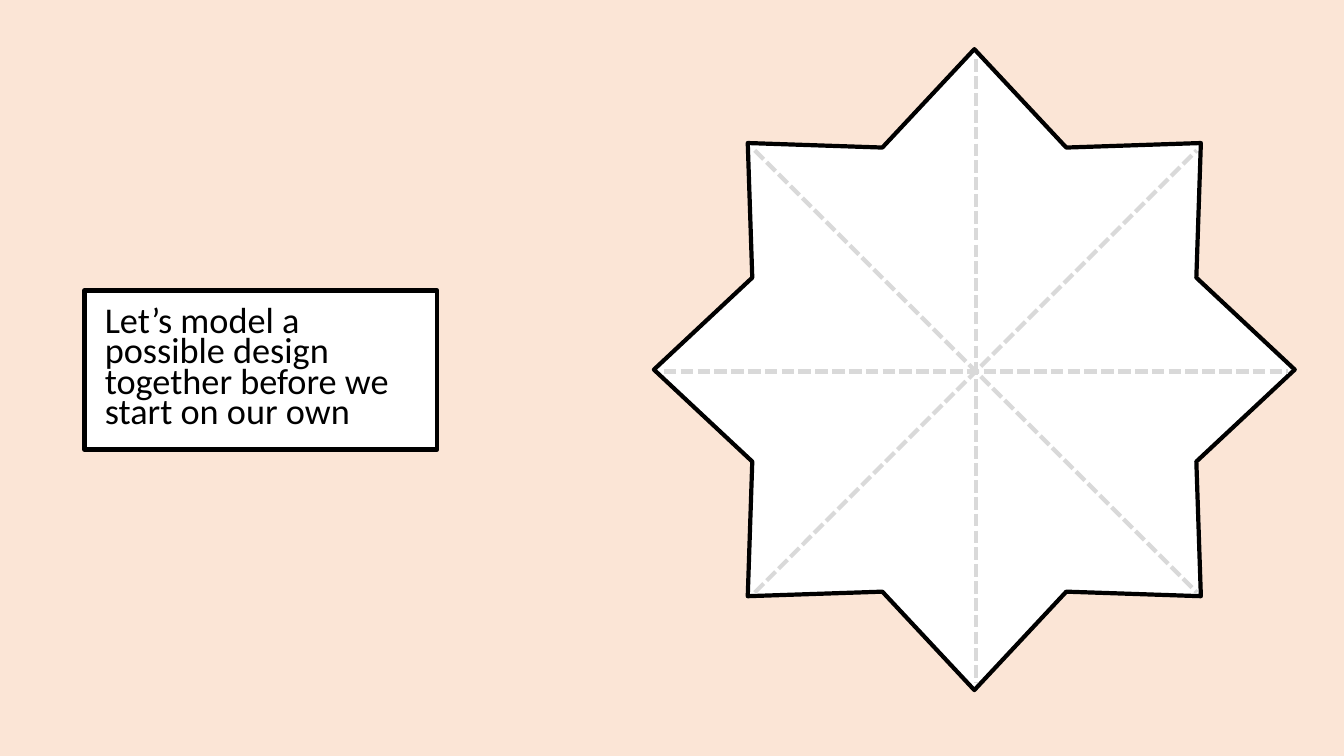
"""Build a slide with an eight-pointed star template and a modelling prompt."""
from lxml.etree import SubElement
from pptx import Presentation
from pptx.dml.color import RGBColor
from pptx.enum.dml import MSO_LINE
from pptx.enum.shapes import MSO_CONNECTOR, MSO_SHAPE
from pptx.enum.text import MSO_ANCHOR, MSO_AUTO_SIZE, PP_ALIGN
from pptx.oxml.ns import qn
from pptx.util import Cm, Pt

PROMPT = "Let’s model a possible design together before we start on our own"
PROMPT_BOX = (2.13, 7.32, 8.89, 4.01)
STAR_BOX = (16.48, 1.24, 16.15, 16.15)
FOLD_CENTRE = (24.59, 9.36)
STRAIGHT_REACH, DIAGONAL_REACH = 7.86, 5.57
FOLD_REACHES = [
    (0, STRAIGHT_REACH),
    (STRAIGHT_REACH, 0),
    (DIAGONAL_REACH, DIAGONAL_REACH),
    (DIAGONAL_REACH, -DIAGONAL_REACH),
]
PEACH, WHITE, BLACK, GREY = "FBE5D6", "FFFFFF", "000000", "D9D9D9"


def paint(color_format, value):
    color_format.rgb = RGBColor.from_string(value)


def fill_solid(fill, value):
    fill.solid()
    paint(fill.fore_color, value)


def outline(shape, value):
    paint(shape.line.color, value)
    shape.line.width = Pt(3)


def add_star(group):
    star = group.shapes.add_shape(MSO_SHAPE.STAR_8_POINT, *map(Cm, STAR_BOX))
    star.shadow.inherit = False
    fill_solid(star.fill, WHITE)
    outline(star, BLACK)


def add_fold(group, across, down):
    x, y = FOLD_CENTRE
    ends = (x - across, y - down, x + across, y + down)
    fold = group.shapes.add_connector(MSO_CONNECTOR.STRAIGHT, *map(Cm, ends))
    outline(fold, GREY)
    fold.line.dash_style = MSO_LINE.SQUARE_DOT
    SubElement(fold._element.spPr, qn("a:effectLst"))


def format_prompt(title):
    title.left, title.top, title.width, title.height = map(Cm, PROMPT_BOX)
    fill_solid(title.fill, WHITE)
    outline(title, BLACK)
    frame = title.text_frame
    frame.text = PROMPT
    frame.word_wrap = True
    frame.auto_size = MSO_AUTO_SIZE.NONE
    frame.vertical_anchor = MSO_ANCHOR.MIDDLE
    frame.margin_left = frame.margin_right = Cm(0.51)
    frame.margin_top = frame.margin_bottom = Cm(0.41)
    paragraph = frame.paragraphs[0]
    paragraph.alignment = PP_ALIGN.LEFT
    paragraph.line_spacing = 0.7
    paragraph.space_before = Pt(10)
    paragraph.font.name = "Calibri"
    paragraph.font.size = Pt(25.9)
    paint(paragraph.font.color, BLACK)


def main():
    presentation = Presentation()
    presentation.slide_width, presentation.slide_height = Cm(33.87), Cm(19.05)
    slide = presentation.slides.add_slide(presentation.slide_layouts[5])
    fill_solid(slide.background.fill, PEACH)
    format_prompt(slide.shapes.title)
    star_group = slide.shapes.add_group_shape()
    add_star(star_group)
    for across, down in FOLD_REACHES:
        add_fold(star_group, across, down)
    presentation.save("out.pptx")


if __name__ == "__main__":
    main()
